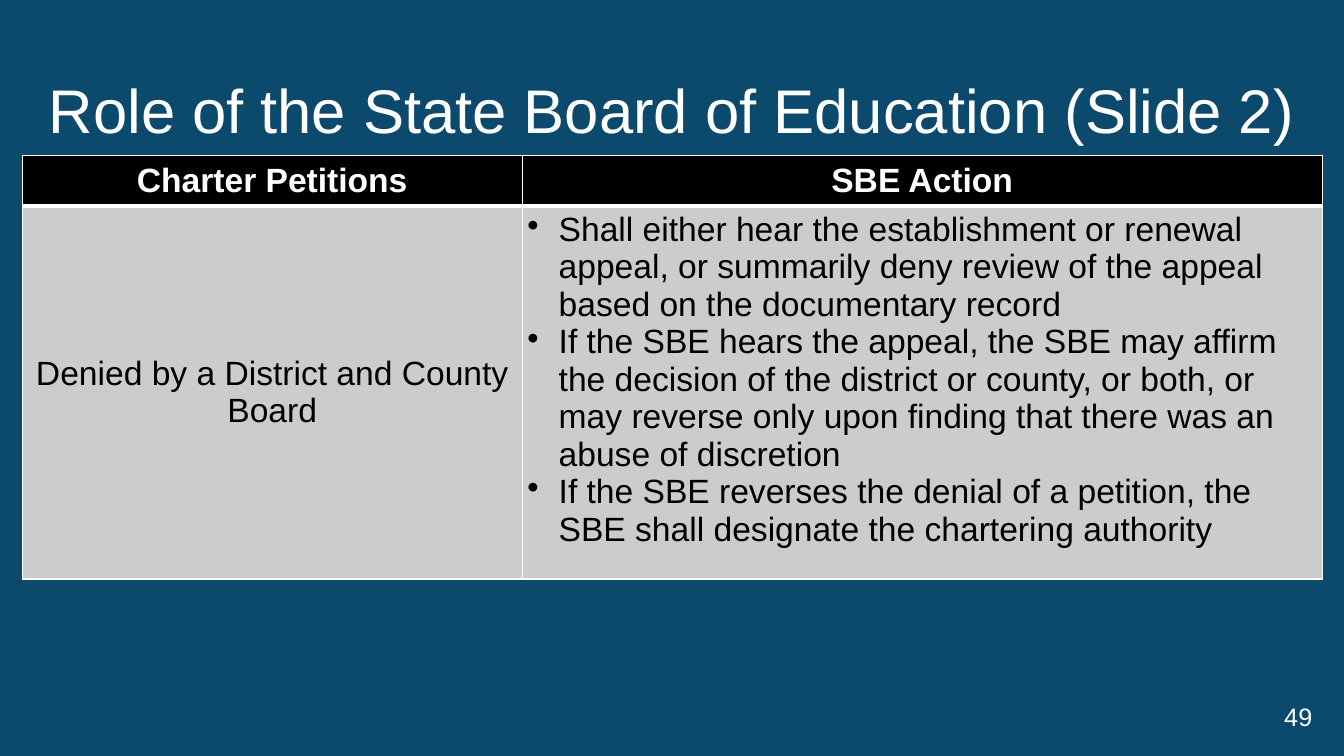
from dataclasses import dataclass

import pptx
import pptx.dml.color
import pptx.enum.text
import pptx.oxml.ns
import pptx.util
from lxml import etree

Cm = pptx.util.Cm
Pt = pptx.util.Pt
Align = pptx.enum.text.PP_ALIGN
Anchor = pptx.enum.text.MSO_ANCHOR


@dataclass(frozen=True)
class Theme:
    font: str = "Arial"
    back: str = "0C4A6D"
    light: str = "FFFFFF"
    dark: str = "000000"
    gray: str = "CCCCCC"
    title: int = 44
    body: int = 24
    number: int = 18
    thin: int = 1
    thick: int = 3


THEME = Theme()
HEADS = ["Charter Petitions", "SBE Action"]
CASE = "Denied by a District and County Board"
ACTS = [
    "Shall either hear the establishment or renewal appeal, or summarily deny "
    "review of the appeal based on the documentary record",
    "If the SBE hears the appeal, the SBE may affirm the decision of the district "
    "or county, or both, or may reverse only upon finding that there was an abuse "
    "of discretion",
    "If the SBE reverses the denial of a petition, the SBE shall designate the "
    "chartering authority",
]


def paint(fill, color):
    fill.solid()
    fill.fore_color.rgb = pptx.dml.color.RGBColor.from_string(color)


def style(para, size, color, align, bold=False):
    para.alignment = align
    font = para.font
    font.name, font.size, font.bold = THEME.font, Pt(size), bold
    paint(font.fill, color)


def add_text(slide, box, text, size, align):
    frame = slide.shapes.add_textbox(*map(Cm, box)).text_frame
    frame.word_wrap = True
    frame.vertical_anchor = Anchor.MIDDLE
    para = frame.paragraphs[0]
    para.text = text
    style(para, size, THEME.light, align)
    return para


def add_edge(cell, side, width):
    props = cell._tc.get_or_add_tcPr()
    name = pptx.oxml.ns.qn
    line = etree.SubElement(props, name(f"a:ln{side}"), w=str(Pt(width)))
    solid = etree.SubElement(line, name("a:solidFill"))
    etree.SubElement(solid, name("a:srgbClr"), val=THEME.light)


def add_bullet(para):
    props = para._p.get_or_add_pPr()
    props.set("marL", str(Cm(0.79)))
    props.set("indent", str(-Cm(0.79)))
    etree.SubElement(props, pptx.oxml.ns.qn("a:buChar"), char="•")


def fill_cell(cell, lines, head=False, list_=False):
    # The rule between header and body is the thick one
    thick = "B" if head else "T"
    for side in "LRTB":
        add_edge(cell, side, THEME.thick if side == thick else THEME.thin)
    paint(cell.fill, THEME.dark if head else THEME.gray)
    cell.margin_left = cell.margin_right = Cm(0.13)
    cell.margin_top = cell.margin_bottom = Cm(0.13)
    cell.vertical_anchor = Anchor.TOP if list_ else Anchor.MIDDLE
    cell.text = "\n".join(lines)
    for para in cell.text_frame.paragraphs:
        if list_:
            add_bullet(para)
        style(para, THEME.body, THEME.light if head else THEME.dark,
              Align.LEFT if list_ else Align.CENTER, head)


def add_grid(slide, box):
    frame = slide.shapes.add_table(2, 2, *map(Cm, box))
    table = frame.table
    table.horz_banding = False
    for col, width in zip(table.columns, (12.6, 20.16)):
        col.width = Cm(width)
    for row, height in zip(table.rows, (1.14, 6.15)):
        row.height = Cm(height)
    for col, head in enumerate(HEADS):
        fill_cell(table.cell(0, col), [head], head=True)
    fill_cell(table.cell(1, 0), [CASE])
    fill_cell(table.cell(1, 1), ACTS, list_=True)
    frame.height = Cm(box[3])


def main():
    deck = pptx.Presentation()
    deck.slide_width, deck.slide_height = Cm(33.87), Cm(19.05)
    slide = deck.slides.add_slide(deck.slide_layouts[6])
    paint(slide.background.fill, THEME.back)

    # Title
    title = add_text(slide, (0.56, 1.02, 32.77, 3.68),
                     "Role of the State Board of Education (Slide 2)",
                     THEME.title, Align.CENTER)
    title.line_spacing = 0.9

    # Table of petitions and actions
    add_grid(slide, (0.56, 3.91, 32.76, 10.67))

    # Slide number
    add_text(slide, (31.9, 17.55, 1.42, 1.02), "49", THEME.number, Align.RIGHT)

    deck.save("out.pptx")


if __name__ == "__main__":
    main()
